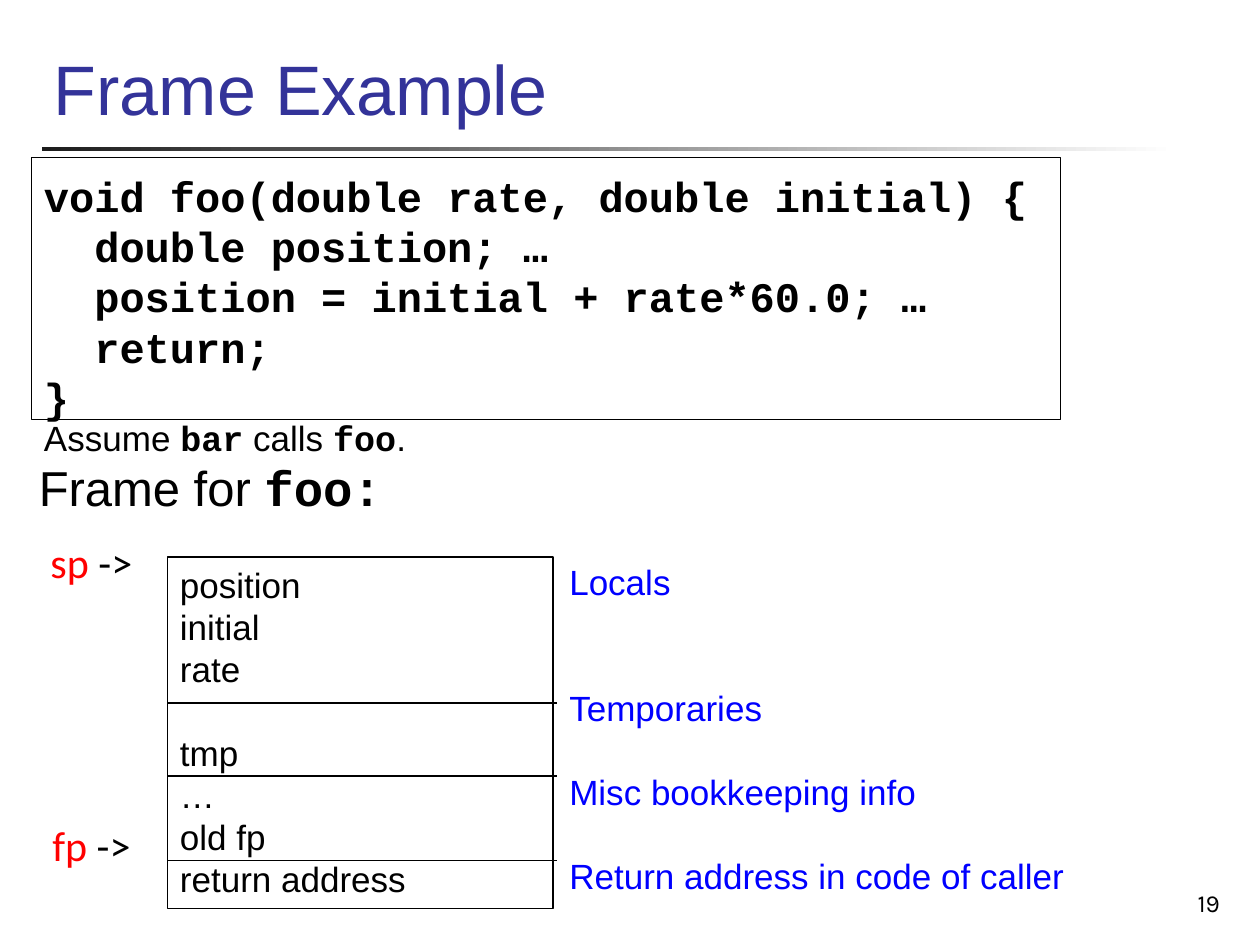
"""Build the slide that explains the stack frame of foo."""
from pptx import Presentation
from pptx.dml.color import RGBColor
from pptx.enum.shapes import MSO_CONNECTOR, MSO_SHAPE
from pptx.enum.text import MSO_ANCHOR, PP_ALIGN
from pptx.oxml.ns import qn
from pptx.util import Inches, Pt
from lxml import etree

BLACK = RGBColor(0, 0, 0)
DARK = RGBColor(0x1C, 0x1C, 0x1C)
WHITE = RGBColor(255, 255, 255)
NAVY = RGBColor(0x33, 0x33, 0x99)
BLUE = RGBColor(0, 0, 255)
RED = RGBColor(255, 0, 0)
STRAIGHT = MSO_CONNECTOR.STRAIGHT
RECT = MSO_SHAPE.RECTANGLE
TOP, MIDDLE, BOTTOM = MSO_ANCHOR.TOP, MSO_ANCHOR.MIDDLE, MSO_ANCHOR.BOTTOM
LEFT, CENTER, RIGHT = PP_ALIGN.LEFT, PP_ALIGN.CENTER, PP_ALIGN.RIGHT

TITLE = {"name": "Arial", "size": Pt(40), "color": NAVY}
HEAD = {"name": "Arial", "size": Pt(28), "color": BLACK}
BODY = {"name": "Arial", "size": Pt(20), "color": BLACK}
NOTE = BODY | {"color": BLUE}
MONO = {"name": "Courier New", "bold": True}
CODE = MONO | {"size": Pt(24), "color": BLACK}
PAGE = {"name": "Karla", "size": Pt(14), "color": BLACK}
MARK = {"name": "Calibri", "size": Pt(24), "color": BLACK}


def write(frame, runs, first=False, **style):
    para = frame.paragraphs[0] if first else frame.add_paragraph()
    for key, value in ({"alignment": LEFT} | style).items():
        setattr(para, key, value)
    for text, form in runs:
        run = para.add_run()
        run.text = text
        for key, value in form.items():
            if key == "color":
                run.font.color.rgb = value
            else:
                setattr(run.font, key, value)
    return para


def place(box, kind=None, anchor=TOP):
    spot = [Inches(v) for v in box]
    if kind is None:
        shape = slide.shapes.add_textbox(*spot)
    else:
        shape = slide.shapes.add_shape(kind, *spot)
        shape.shadow.inherit = False
        shape.fill.background()
        shape.line.color.rgb = BLACK
        shape.line.width = Pt(0.75)
    shape.text_frame.word_wrap = True
    shape.text_frame.vertical_anchor = anchor
    return shape


deck = Presentation()
deck.slide_width, deck.slide_height = Inches(10), Inches(7.5)
slide = deck.slides.add_slide(deck.slide_layouts[6])

rule = place((0.33, 1.17, 9, 0.03), RECT)
rule.line.fill.background()
rule.fill.gradient()
rule.fill.gradient_angle = 0
for stop, color, spot in zip(rule.fill.gradient_stops, (DARK, WHITE), (0, 1)):
    stop.color.rgb = color
    stop.position = spot

page = place((7.7, 6.83, 2.08, 0.5), anchor=BOTTOM)
write(page.text_frame, [("19", PAGE)], True, alignment=RIGHT)
title = place((0.33, -0.17, 8.5, 1.25), anchor=BOTTOM)
write(title.text_frame, [("Frame Example", TITLE)], True)

code = place((0.25, 1.25, 8.09, 2.46)).text_frame
code.margin_top = Inches(0.1)
lines = [
    ("void foo(double rate, double initial) {", 0),
    ("double position; …", 0.4),
    ("position = initial + rate*60.0; …", 0.4),
    ("return;", 0.4),
    ("}", 0),
]
for row, (text, indent) in enumerate(lines):
    para = write(code, [(text, CODE)], row == 0, line_spacing=Pt(28.8))
    para._p.get_or_add_pPr().set("marL", str(Inches(indent)))
parts = [("Assume ", BODY), ("bar", BODY | MONO), (" calls ", BODY),
         ("foo", BODY | MONO), (".", BODY)]
write(code, parts, line_spacing=Pt(21))
place((0.25, 1.25, 8.17, 2.08), RECT)

head = place((0.21, 3.58, 2.96, 0.57))
write(head.text_frame, [("Frame for ", HEAD), ("foo:", HEAD | MONO)], True)

slots = [("position", 0), ("initial", 0), ("rate", 0), ("tmp", 1),
         ("…", 0), ("old fp", 0), ("return address", 0)]
notes = [("Locals", 0), ("Temporaries", 2), ("Misc bookkeeping info", 1),
         ("Return address in code of caller", 1)]
stack = place((1.33, 4.42, 3.06, 2.79), RECT)
legend = place((4.42, 4.4, 4.67, 2.79))
for shape, rows, form in ((stack, slots, BODY), (legend, notes, NOTE)):
    for row, (text, gap) in enumerate(rows):
        write(shape.text_frame, [(text, form)], row == 0,
              line_spacing=Pt(24), space_before=Pt(24 * gap))

for y in (5.58, 6.16, 6.83):
    line = slide.shapes.add_connector(
        STRAIGHT, Inches(1.33), Inches(y), Inches(4.42), Inches(y))
    line.line.color.rgb = BLACK
    line.line.width = Pt(0.75)
    etree.SubElement(line._element.spPr, qn("a:effectLst"))

for name, y in (("sp", 4.17), ("fp", 6.42)):
    mark = place((0.12, y, 1.21, 0.57), anchor=MIDDLE)
    write(mark.text_frame, [(name, MARK | {"color": RED}), (" ->", MARK)],
          True, alignment=CENTER)

deck.save("out.pptx")
